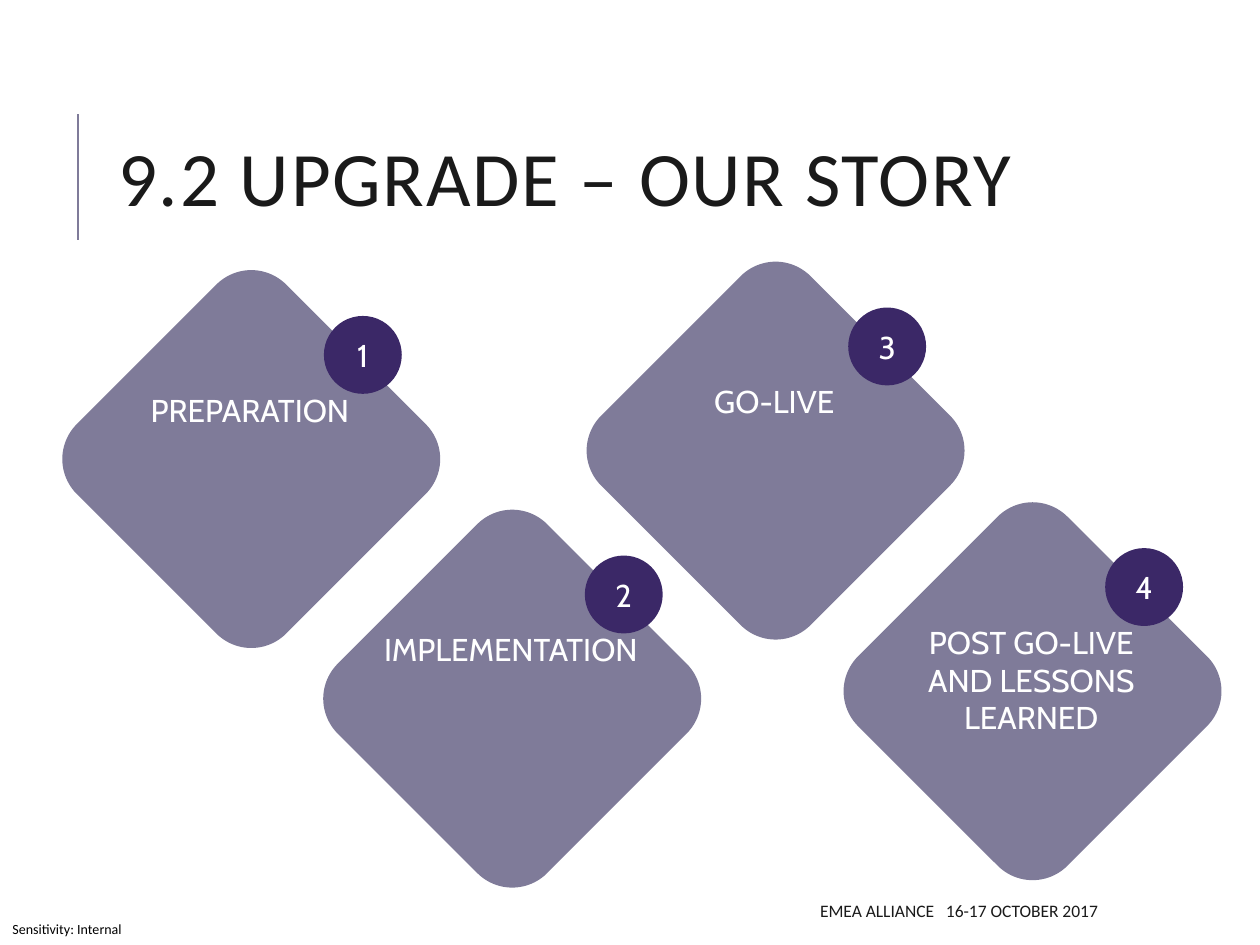
from lxml import etree
from pptx import Presentation
from pptx.dml.color import RGBColor
from pptx.enum.shapes import MSO_CONNECTOR, MSO_SHAPE
from pptx.enum.text import MSO_ANCHOR, MSO_AUTO_SIZE, PP_ALIGN
from pptx.oxml.ns import qn
from pptx.util import Cm, Pt

LEFT, CENTER, RIGHT = PP_ALIGN.LEFT, PP_ALIGN.CENTER, PP_ALIGN.RIGHT
TOP, MIDDLE = MSO_ANCHOR.TOP, MSO_ANCHOR.MIDDLE
GROW, FIXED = MSO_AUTO_SIZE.SHAPE_TO_FIT_TEXT, MSO_AUTO_SIZE.NONE
DIAMOND, BADGE = MSO_SHAPE.ROUNDED_RECTANGLE, MSO_SHAPE.OVAL
STRAIGHT = MSO_CONNECTOR.STRAIGHT

MAUVE, PURPLE, INK, WHITE, BLACK = "7F7B99", "3B2867", "1A1A1A", "FFFFFF", "000000"
SIDE = 5.97

STEPS = [
    ("PREPARATION", 2.08, 6.27, 1.02),
    ("IMPLEMENTATION", 7.34, 11.1, 1.02),
    ("GO-LIVE", 12.65, 6.1, 1.02),
    ("POST GO-LIVE AND LESSONS LEARNED", 17.83, 10.95, 1.8),
]


def paint(target, color):
    target.rgb = RGBColor.from_string(color)


def write(shape, text, size, font, color, align, anchor):
    frame = shape.text_frame
    frame.text = text
    frame.word_wrap = True
    frame.vertical_anchor = anchor
    line = frame.paragraphs[0]
    line.alignment = align
    run = line.runs[0]
    run.font.size = Pt(size)
    run.font.name = font
    paint(run.font.color, color)
    return frame


def add_form(slide, kind, x, y, size, color):
    shape = slide.shapes.add_shape(kind, Cm(x), Cm(y), Cm(size), Cm(size))
    shape.shadow.inherit = False
    shape.fill.solid()
    paint(shape.fill.fore_color, color)
    shape.line.fill.background()
    return shape


def add_label(slide, box, text, size, font, color, align, anchor):
    shape = slide.shapes.add_textbox(*[Cm(v) for v in box])
    return write(shape, text, size, font, color, align, anchor)


def add_step(slide, number, text, x, y, height):
    add_form(slide, DIAMOND, x, y, SIDE, MAUVE).rotation = 45
    badge = add_form(slide, BADGE, x + 4.45, y + 0.1, 1.57, PURPLE)
    write(badge, str(number), 18, "Cabin", WHITE, CENTER, MIDDLE)
    box = (x + 0.1, y + 1.48, 5.72, height)
    frame = add_label(slide, box, text, 18, "Cabin", WHITE, CENTER, TOP)
    frame.auto_size = GROW


def add_rule(slide):
    rule = slide.shapes.add_connector(STRAIGHT, Cm(1.57), Cm(4.83), Cm(1.57), Cm(2.29))
    paint(rule.line.color, MAUVE)
    rule.line.width = Pt(1.5)
    etree.SubElement(rule._element.spPr, qn("a:effectLst"))


def set_title(slide):
    title = slide.shapes.title
    title.left, title.top = Cm(2.13), Cm(1.63)
    title.width, title.height = Cm(20.24), Cm(4.17)
    frame = write(title, "9.2 UPGRADE – OUR STORY", 44, "Calibri", INK, LEFT, MIDDLE)
    frame.auto_size = FIXED
    line = frame.paragraphs[0]
    line.line_spacing = 0.8
    line.runs[0].font._element.set("spc", "100")


def add_notice(slide):
    box = (0, 18.42, 2.9, 0.63)
    frame = add_label(slide, box, "Sensitivity: Internal", 8, "Calibri", BLACK, LEFT, MIDDLE)
    frame.margin_top = frame.margin_bottom = 0
    frame.word_wrap = False


def add_footer(slide):
    for text, x, width in [("EMEA ALLIANCE", 12.88, 6.2), ("16-17 OCTOBER 2017", 18.5, 3.88)]:
        add_label(slide, (x, 17.98, width, 0.76), text, 10, "Calibri", INK, RIGHT, MIDDLE)


def main():
    deck = Presentation()
    deck.slide_width, deck.slide_height = Cm(25.4), Cm(19.05)
    slide = deck.slides.add_slide(deck.slide_layouts[5])
    add_rule(slide)
    add_notice(slide)
    set_title(slide)
    for number, step in enumerate(STEPS, 1):
        add_step(slide, number, *step)
    add_footer(slide)
    deck.save("out.pptx")


if __name__ == "__main__":
    main()
